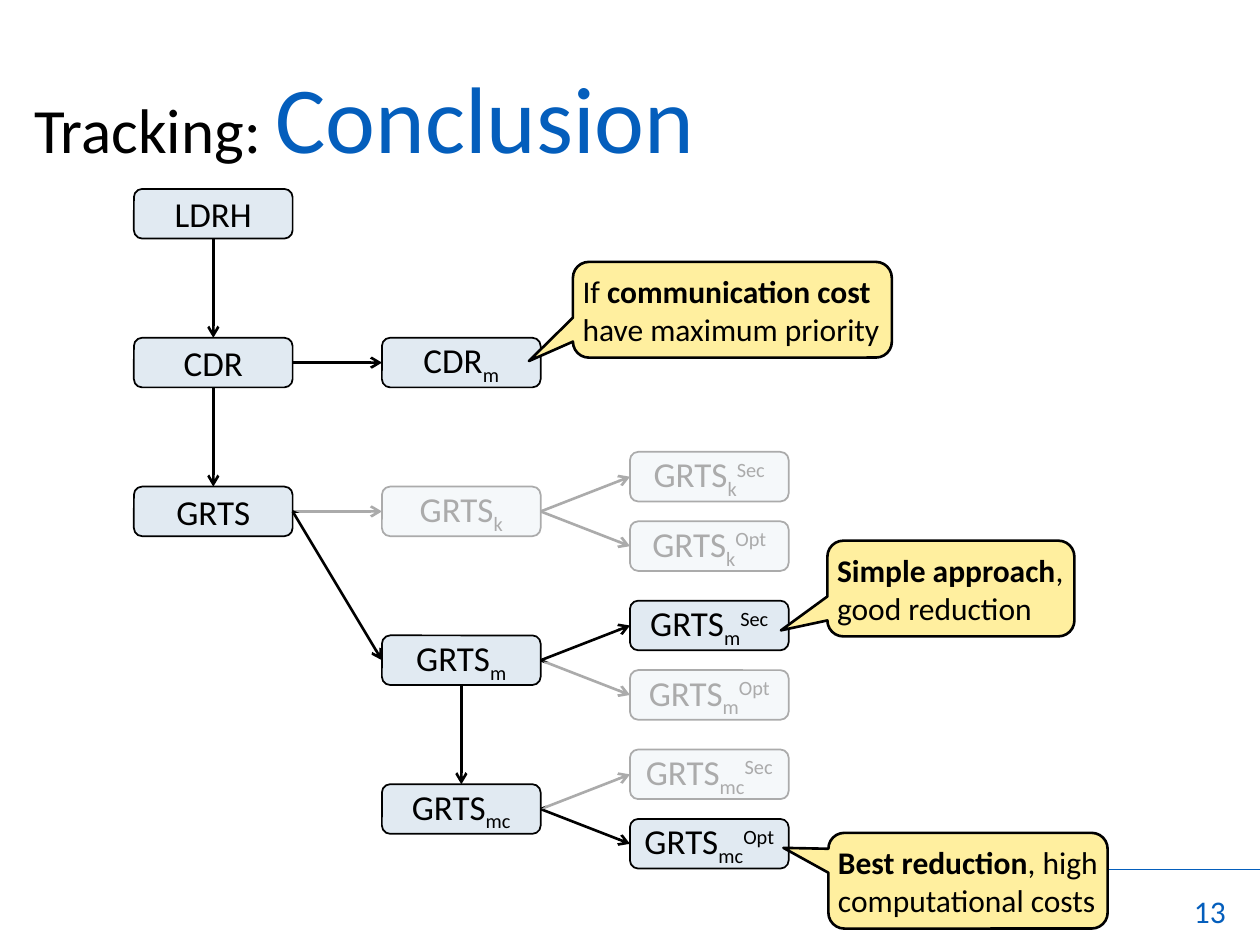
from dataclasses import dataclass

from lxml.etree import SubElement
from pptx import Presentation
from pptx.dml.color import RGBColor
from pptx.enum.shapes import MSO_CONNECTOR, MSO_SHAPE
from pptx.enum.text import MSO_ANCHOR, MSO_AUTO_SIZE, PP_ALIGN
from pptx.oxml.ns import qn
from pptx.util import Cm, Pt


@dataclass(frozen=True)
class Theme:
    font: str = "Calibri"
    ink: str = "000000"
    accent: str = "045EBC"
    box: str = "E1EAF2"
    callout: str = "FFEF9F"
    veil: str = "FFFFFF"
    veil_opacity: int = 67
    title_size: int = 54
    prefix_size: int = 36
    box_size: int = 20
    note_size: int = 18
    thin: float = 1
    thick: float = 1.5


THEME = Theme()
TOP, LEFT, BOTTOM, RIGHT = range(4)  # connection sites of a box
SUBSCRIPT, SUPERSCRIPT = -25000, 30000


def add_text(paragraph, text, size, color=THEME.ink, bold=False, baseline=None):
    """Append formatted text; a newline becomes a line break."""
    for index, line in enumerate(text.split("\n")):
        if index:
            paragraph.add_line_break()
        if not line:
            continue
        run = paragraph.add_run()
        run.text = line
        run.font.name = THEME.font
        run.font.size = Pt(size)
        run.font.bold = bold
        run.font.color.rgb = RGBColor.from_string(color)
        if baseline:
            run._r.get_or_add_rPr().set("baseline", str(baseline))


class SlideBuilder:
    def __init__(self, slide, theme):
        self.slide = slide
        self.theme = theme

    def prepare(self, shape, anchor, margin=0, align=PP_ALIGN.LEFT, wrap=False):
        """Set up the text frame and return its first paragraph."""
        frame = shape.text_frame
        frame.word_wrap = wrap
        frame.vertical_anchor = anchor
        frame.margin_left = frame.margin_right = Cm(margin)
        frame.margin_top = frame.margin_bottom = Cm(margin)
        paragraph = frame.paragraphs[0]
        paragraph.alignment = align
        return paragraph

    def text_box(self, left, top, width, height, anchor, **layout):
        shape = self.slide.shapes.add_textbox(Cm(left), Cm(top), Cm(width), Cm(height))
        return self.prepare(shape, anchor, **layout)

    def filled_shape(self, kind, place, fill, line_width):
        shape = self.slide.shapes.add_shape(kind, *map(Cm, place))
        shape.shadow.inherit = False
        shape.fill.solid()
        shape.fill.fore_color.rgb = RGBColor.from_string(fill)
        shape.line.color.rgb = RGBColor.from_string(self.theme.ink)
        shape.line.width = Pt(line_width)
        return shape

    def box(self, left, top, name, lower="", upper=""):
        shape = self.filled_shape(MSO_SHAPE.ROUNDED_RECTANGLE,
                                  (left, top, BOX_WIDTH, BOX_HEIGHT),
                                  self.theme.box, self.theme.thin)
        paragraph = self.prepare(shape, MSO_ANCHOR.MIDDLE, align=PP_ALIGN.CENTER)
        for text, baseline in ((name, None), (lower, SUBSCRIPT), (upper, SUPERSCRIPT)):
            add_text(paragraph, text, self.theme.box_size, baseline=baseline)
        return shape

    def callout(self, place, tip, parts):
        shape = self.filled_shape(MSO_SHAPE.ROUNDED_RECTANGULAR_CALLOUT, place,
                                  self.theme.callout, self.theme.thick)
        for index, value in enumerate(tip):
            shape.adjustments[index] = value
        paragraph = self.prepare(shape, MSO_ANCHOR.MIDDLE, margin=0.1)
        shape.text_frame.auto_size = MSO_AUTO_SIZE.SHAPE_TO_FIT_TEXT
        for text, bold in parts:
            add_text(paragraph, text, self.theme.note_size, bold=bold)

    def line(self, start, end, color, width):
        connector = self.slide.shapes.add_connector(
            MSO_CONNECTOR.STRAIGHT, *map(Cm, start + end))
        connector.line.color.rgb = RGBColor.from_string(color)
        connector.line.width = Pt(width)
        SubElement(connector._element.spPr, qn("a:effectLst"))
        return connector

    def arrow(self, source, source_site, target, target_site):
        connector = self.line((0, 0), (1, 1), self.theme.ink, self.theme.thick)
        connector.begin_connect(source, source_site)
        connector.end_connect(target, target_site)
        SubElement(connector.line._get_or_add_ln(), qn("a:tailEnd"), type="arrow")

    def veil(self, points):
        """Cover an area with translucent white to fade it."""
        corners = [(Cm(x), Cm(y)) for x, y in points]
        builder = self.slide.shapes.build_freeform(*corners[0])
        builder.add_line_segments(corners[1:], close=True)
        shape = builder.convert_to_shape()
        shape.shadow.inherit = False
        shape.line.fill.background()
        shape.fill.solid()
        shape.fill.fore_color.rgb = RGBColor.from_string(self.theme.veil)
        color = shape._element.spPr.find(qn("a:solidFill"))[0]
        SubElement(color, qn("a:alpha"), val=str(self.theme.veil_opacity * 1000))


# Grid of the tree, in centimetres
BOX_WIDTH, BOX_HEIGHT = 3.2, 1
COLUMNS = [2.7 + 5 * index for index in range(3)]
ROWS = [3.81 + 3 * index for index in range(5)]
BRANCH_OFFSET = 0.7

CALLOUTS = [
    ((11.55, 5.28, 6.43, 1.93), (-0.638, 0.536, 0.167),
     [("If ", False), ("communication cost\n", True), ("have maximum priority", False)]),
    ((16.68, 10.9, 4.98, 1.93), (-0.688, 0.437, 0.167),
     [("Simple approach", True), (",\ngood reduction", False)]),
    ((16.7, 16.79, 5.63, 1.93), (-0.661, -0.343, 0.167),
     [("Best reduction", True), (", high\ncomputational costs", False)]),
]

VEILS = [
    [(5.92, 10.29), (6.65, 9.55), (10.82, 9.58), (12.67, 8.71), (16.18, 8.76),
     (16.13, 11.73), (12.78, 11.79), (10.87, 11.07), (7.8, 11.07)],
    [(10.95, 13.34), (12.65, 14.76), (16.23, 14.71), (16.21, 13.39), (12.7, 13.34)],
    [(10.92, 16.31), (12.73, 16.31), (16.43, 16.28), (16.46, 14.88), (12.67, 14.91)],
]


def main():
    presentation = Presentation()
    presentation.slide_width, presentation.slide_height = Cm(25.4), Cm(19.05)
    slide = presentation.slides.add_slide(presentation.slide_layouts[6])
    builder = SlideBuilder(slide, THEME)

    # Footer rule, page number and title
    builder.line((25.4, 17.53), (20.65, 17.53), THEME.accent, THEME.thin)
    number = builder.text_box(22.63, 17.48, 2.08, 1.27, MSO_ANCHOR.BOTTOM,
                              align=PP_ALIGN.RIGHT, wrap=True)
    add_text(number, "13", THEME.note_size, color=THEME.accent)
    title = builder.text_box(0.69, 1.19, 24, 2.84, MSO_ANCHOR.TOP, wrap=True)
    add_text(title, "Tracking: ", THEME.prefix_size)
    add_text(title, "Conclusion", THEME.title_size, color=THEME.accent)

    # Main methods, top to bottom
    ldrh, cdr, grts = [builder.box(COLUMNS[0], top, name)
                       for top, name in zip(ROWS, ("LDRH", "CDR", "GRTS"))]
    cdr_m = builder.box(COLUMNS[1], ROWS[1], "CDR", "m")
    variants = {}

    # GRTS variants, each with a Sec and an Opt branch
    for top, lower in zip(ROWS[2:], ("k", "m", "mc")):
        variant = variants[lower] = builder.box(COLUMNS[1], top, "GRTS", lower)
        for upper, offset in (("Sec", -BRANCH_OFFSET), ("Opt", BRANCH_OFFSET)):
            branch = builder.box(COLUMNS[2], top + offset, "GRTS", lower, upper)
            builder.arrow(variant, RIGHT, branch, LEFT)

    # Arrows between methods
    for source, target in ((ldrh, cdr), (cdr, grts), (variants["m"], variants["mc"])):
        builder.arrow(source, BOTTOM, target, TOP)
    for source, target in ((cdr, cdr_m), (grts, variants["k"]), (grts, variants["m"])):
        builder.arrow(source, RIGHT, target, LEFT)

    # Recommendations, then fading of the rejected branches
    for place, tip, parts in CALLOUTS:
        builder.callout(place, tip, parts)
    for points in VEILS:
        builder.veil(points)

    presentation.save("out.pptx")


if __name__ == "__main__":
    main()
